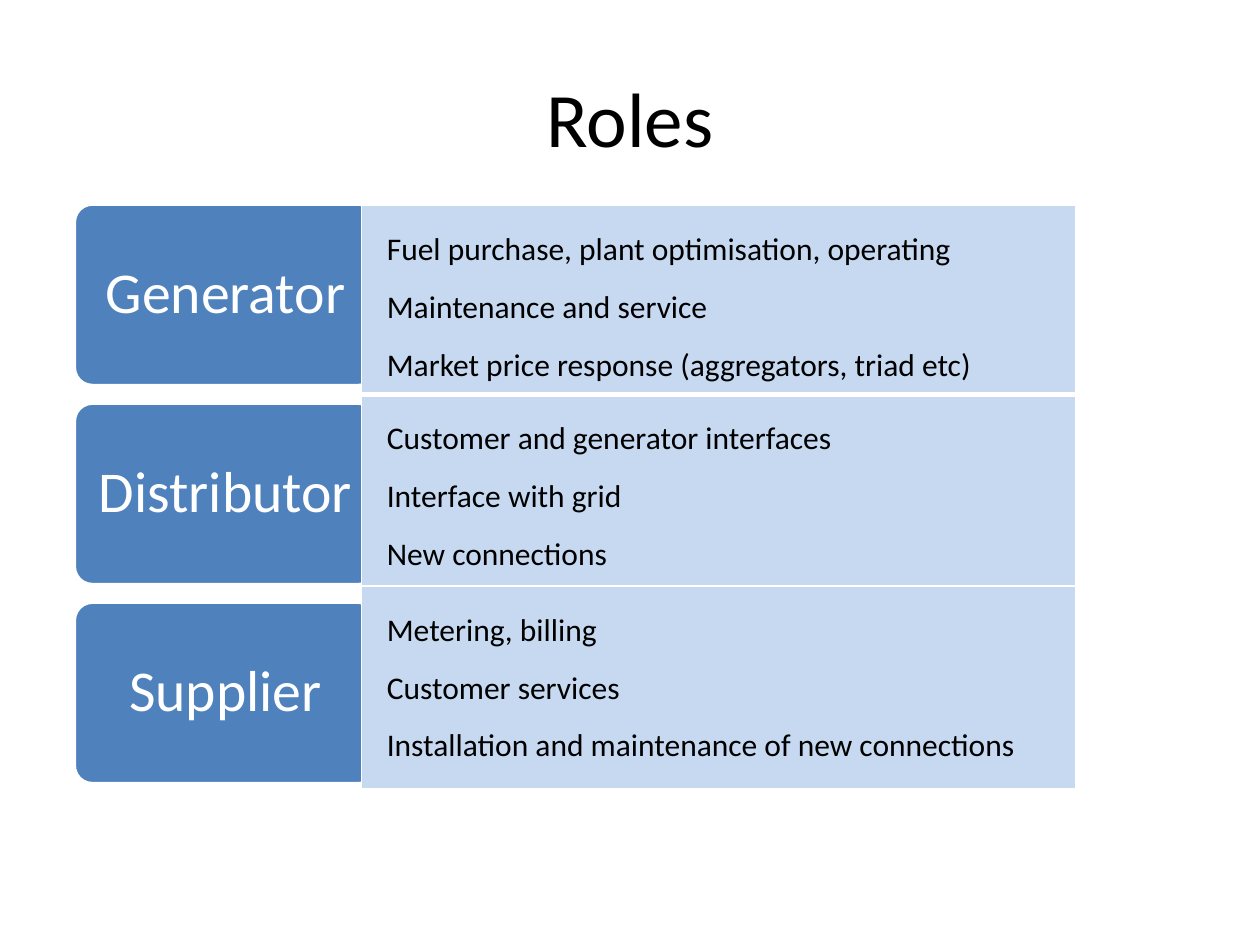
"""Build the slide of industry roles and their duties."""
from dataclasses import dataclass

import pptx
import pptx.dml.color
import pptx.enum.shapes
import pptx.enum.text
import pptx.oxml
import pptx.oxml.ns
import pptx.util
from pptx.util import Inches


@dataclass(frozen=True)
class Theme:
    font: str = "Calibri"
    ink: str = "000000"
    white: str = "FFFFFF"
    label_fill: str = "4F81BD"
    duty_fill: str = "C6D9F1"
    title_size: int = 44
    label_size: int = 33
    duty_size: int = 18


@dataclass(frozen=True)
class Role:
    name: str
    duties: tuple[str, ...]
    row_height: float
    rule_above: int = 1
    rule_below: int = 1


THEME = Theme()
LABEL_TOP = 1.62
LABEL_STEP = 1.58
ROLES = (
    Role("Generator", (
        "Fuel purchase, plant optimisation, operating",
        "Maintenance and service",
        "Market price response (aggregators, triad etc)",
    ), 1.5, rule_below=3),
    Role("Distributor", (
        "Customer and generator interfaces",
        "Interface with grid",
        "New connections",
    ), 1.52, rule_above=3),
    Role("Supplier", (
        "Metering, billing",
        "Customer services",
        "Installation and maintenance of new connections",
    ), 1.61),
)


def rgb(value: str) -> pptx.dml.color.RGBColor:
    """Turn a hexadecimal value into a colour."""
    return pptx.dml.color.RGBColor.from_string(value)


def style_paragraph(paragraph, size: int, color: str) -> None:
    """Set the font of a whole paragraph."""
    paragraph.font.name = THEME.font
    paragraph.font.size = pptx.util.Pt(size)
    paragraph.font.color.rgb = rgb(color)


def set_title(slide, text: str) -> None:
    """Place and format the title placeholder."""
    title = slide.shapes.title
    title.left, title.top = Inches(0.5), Inches(0.3)
    title.width, title.height = Inches(9), Inches(1.25)
    title.text_frame.text = text
    title.text_frame.vertical_anchor = pptx.enum.text.MSO_ANCHOR.MIDDLE
    paragraph = title.text_frame.paragraphs[0]
    paragraph.alignment = pptx.enum.text.PP_ALIGN.CENTER
    style_paragraph(paragraph, THEME.title_size, THEME.ink)


def draw_label(slide, role: Role, top: float) -> None:
    """Draw the rounded box that names a role."""
    shape = slide.shapes.add_shape(
        pptx.enum.shapes.MSO_SHAPE.ROUNDED_RECTANGLE,
        Inches(0.59), Inches(top), Inches(2.4), Inches(1.44))
    shape.adjustments[0] = 0.1
    shape.shadow.inherit = False
    shape.fill.solid()
    shape.fill.fore_color.rgb = rgb(THEME.label_fill)
    shape.line.color.rgb = rgb(THEME.white)
    shape.line.width = pptx.util.Pt(2)
    frame = shape.text_frame
    frame.text = role.name
    frame.word_wrap = True
    frame.vertical_anchor = pptx.enum.text.MSO_ANCHOR.MIDDLE
    frame.margin_left = frame.margin_right = Inches(0.14)
    frame.margin_top = frame.margin_bottom = Inches(0.14)
    paragraph = frame.paragraphs[0]
    paragraph.alignment = pptx.enum.text.PP_ALIGN.CENTER
    paragraph.line_spacing = 0.9
    style_paragraph(paragraph, THEME.label_size, THEME.white)


def set_borders(cell, above: int, below: int) -> None:
    """Give a cell white borders of the given widths in points."""
    properties = cell._tc.get_or_add_tcPr()
    for side, width in (("L", 1), ("R", 1), ("T", above), ("B", below)):
        properties.append(pptx.oxml.parse_xml(
            f'<a:ln{side} {pptx.oxml.ns.nsdecls("a")} w="{pptx.util.Pt(width)}">'
            f'<a:solidFill><a:srgbClr val="{THEME.white}"/></a:solidFill>'
            f'</a:ln{side}>'))


def fill_cell(cell, role: Role) -> None:
    """Write the duties of a role into its table cell."""
    set_borders(cell, role.rule_above, role.rule_below)
    cell.fill.solid()
    cell.fill.fore_color.rgb = rgb(THEME.duty_fill)
    cell.text = "\n".join(role.duties)
    for paragraph in cell.text_frame.paragraphs:
        paragraph.line_spacing = 1.5
        paragraph._p.get_or_add_pPr().set("marL", str(Inches(0.1)))
        style_paragraph(paragraph, THEME.duty_size, THEME.ink)


def draw_duties(slide, roles: tuple[Role, ...]) -> None:
    """Draw the table of duties, one row for each role."""
    height = sum(role.row_height for role in roles)
    table = slide.shapes.add_table(
        len(roles), 1, Inches(2.87), Inches(1.63),
        Inches(5.67), Inches(height)).table
    table.first_row = table.horz_banding = False
    for row, role in zip(table.rows, roles):
        row.height = Inches(role.row_height)
        fill_cell(row.cells[0], role)


def main() -> None:
    """Build and save the presentation."""
    presentation = pptx.Presentation()
    presentation.slide_width, presentation.slide_height = Inches(10), Inches(7.5)
    slide = presentation.slides.add_slide(presentation.slide_layouts[5])
    set_title(slide, "Roles")
    for index, role in enumerate(ROLES):
        draw_label(slide, role, LABEL_TOP + index * LABEL_STEP)
    draw_duties(slide, ROLES)
    presentation.save("out.pptx")


if __name__ == "__main__":
    main()
